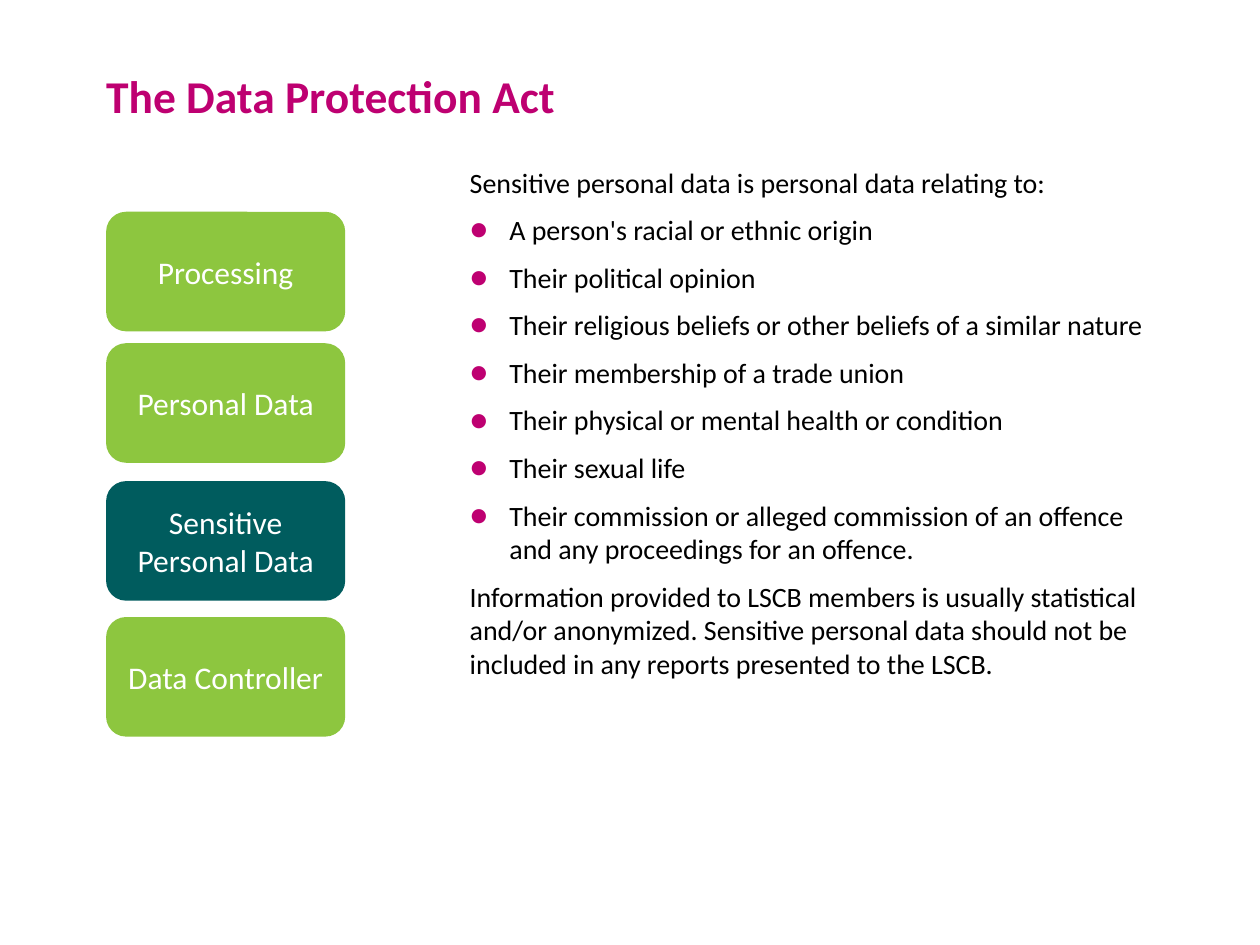
from pptx import Presentation
from pptx.dml.color import RGBColor as Rgb
from pptx.enum.shapes import MSO_SHAPE as Kind
from pptx.enum.text import MSO_ANCHOR as Anchor, PP_ALIGN as Align
from pptx.oxml.ns import qn
from pptx.util import Cm, Pt
from lxml.etree import SubElement as Sub

COLS = {
    "pink": "BE0071",
    "green": "8DC63F",
    "teal": "005C5E",
    "white": "FFFFFF",
    "black": "000000",
}
FONT = "Calibri"


class Deck:
    """Style and current slide."""

    def __init__(self):
        self.prs = Presentation()
        self.prs.slide_width, self.prs.slide_height = Cm(25.4), Cm(19.05)
        self.slide = self.prs.slides.add_slide(self.prs.slide_layouts[6])

    def col(self, name):
        return Rgb.from_string(COLS[name])

    def run(self, para, text, size, col, bold=False):
        run = para.add_run()
        run.text = text
        font = run.font
        font.name, font.size, font.bold = FONT, Pt(size), bold
        font.color.rgb = self.col(col)

    def frame(self, x, y, w, h):
        """Text box without insets."""
        box = self.slide.shapes.add_textbox(Cm(x), Cm(y), Cm(w), Cm(h))
        frame = box.text_frame
        frame.word_wrap = True
        frame.margin_left = frame.margin_right = 0
        frame.margin_top = frame.margin_bottom = 0
        return frame

    def title(self, text, *at):
        para = self.frame(*at).paragraphs[0]
        self.run(para, text, 26, "pink", True)

    def bullet(self, para):
        props = para._p.get_or_add_pPr()
        props.set("marL", str(Cm(0.8)))
        props.set("indent", str(-Cm(0.8)))
        tint = Sub(props, qn("a:buClr"))
        Sub(tint, qn("a:srgbClr"), val=COLS["pink"])
        Sub(props, qn("a:buSzPct"), val="110000")
        Sub(props, qn("a:buFont"), typeface=FONT)
        Sub(props, qn("a:buChar"), char="●")

    def body(self, intro, items, close, *at):
        frame = self.frame(*at)
        lines = [(intro, False), *((item, True) for item in items), (close, False)]
        for i, (text, dot) in enumerate(lines):
            para = frame.add_paragraph() if i else frame.paragraphs[0]
            if dot:
                self.bullet(para)
            if i:
                para.space_before = Pt(8)
            self.run(para, text, 16, "black")

    def card(self, text, fill, *at):
        card = self.slide.shapes.add_shape(Kind.ROUNDED_RECTANGLE, *map(Cm, at))
        card.shadow.inherit = False
        card.fill.solid()
        card.fill.fore_color.rgb = self.col(fill)
        card.line.fill.background()
        frame = card.text_frame
        frame.word_wrap = True
        frame.vertical_anchor = Anchor.MIDDLE
        para = frame.paragraphs[0]
        para.alignment = Align.CENTER
        self.run(para, text, 18, "white")


def main():
    deck = Deck()
    left = 2.14

    # Heading
    deck.title("The Data Protection Act", left, 1.37, 13.56, 1.02)

    # Explanation
    deck.body(
        "Sensitive personal data is personal data relating to:",
        [
            "A person's racial or ethnic origin",
            "Their political opinion",
            "Their religious beliefs or other beliefs of a similar nature",
            "Their membership of a trade union",
            "Their physical or mental health or condition",
            "Their sexual life",
            "Their commission or alleged commission of an offence "
            "and any proceedings for an offence.",
        ],
        "Information provided to LSCB members is usually statistical "
        "and/or anonymized. Sensitive personal data should not be "
        "included in any reports presented to the LSCB.",
        9.47, 3.33, 14.07, 11.76,
    )

    # Topics, with the current one in teal
    topics = [
        ("Processing", "green", 4.27),
        ("Personal Data", "green", 6.92),
        ("Sensitive Personal Data", "teal", 9.7),
        ("Data Controller", "green", 12.44),
    ]
    for text, fill, top in topics:
        deck.card(text, fill, left, top, 4.82, 2.41)

    deck.prs.save("out.pptx")


if __name__ == "__main__":
    main()
